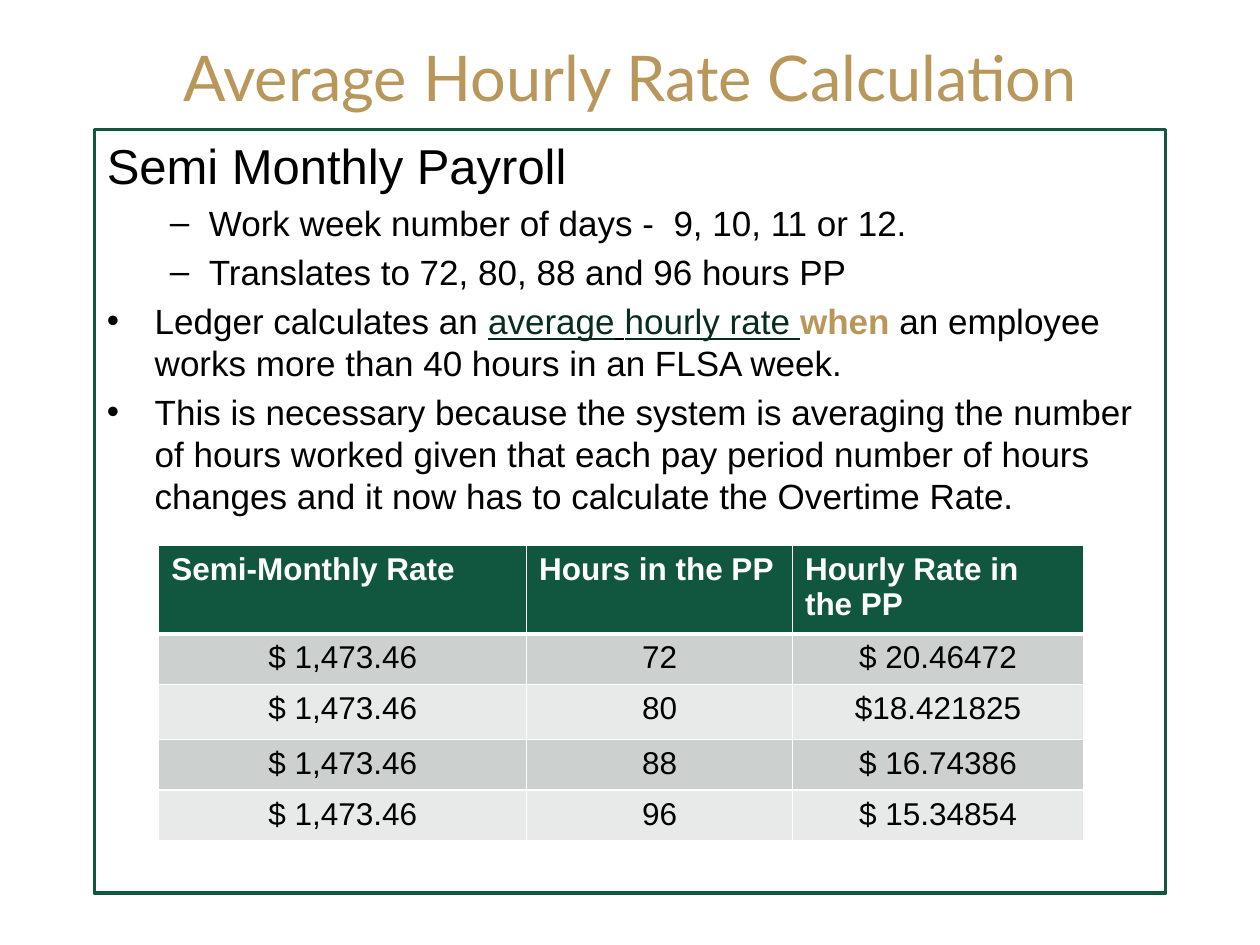
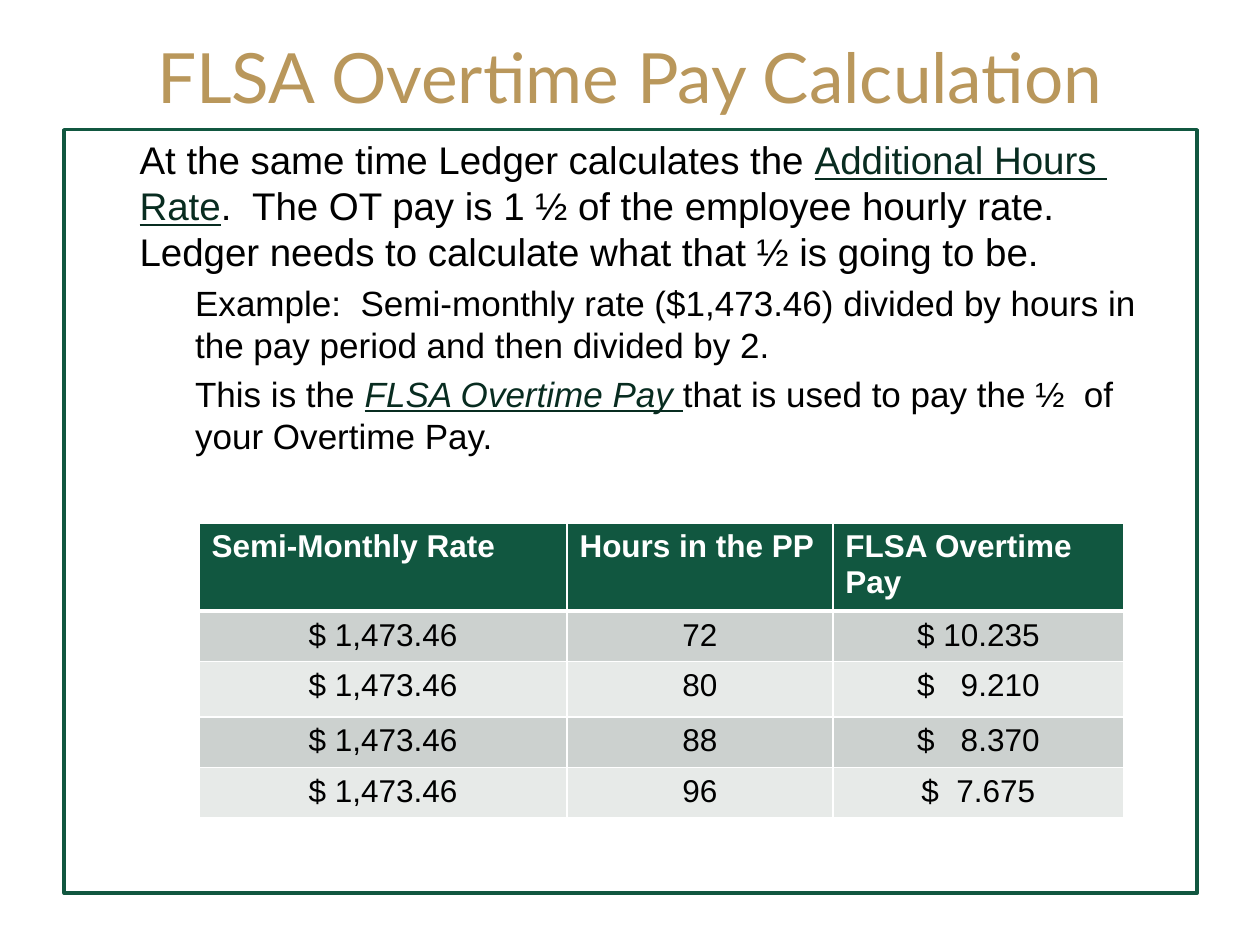
from lxml import etree
from pptx import Presentation
from pptx.dml.color import RGBColor
from pptx.enum.shapes import MSO_SHAPE
from pptx.enum.text import MSO_ANCHOR, PP_ALIGN
from pptx.oxml.ns import qn
from pptx.util import Pt

LEFT, CENTER = PP_ALIGN.LEFT, PP_ALIGN.CENTER
TOP, MIDDLE = MSO_ANCHOR.TOP, MSO_ANCHOR.MIDDLE
RECT = MSO_SHAPE.RECTANGLE

PX = 9144  # EMU in one px, 100 px to the inch
GREEN, GOLD, DARK = "115740", "B9975B", "082C20"
BLACK, WHITE = "000000", "FFFFFF"
BANDS = ["CCD1CF", "E7EAE8"]

TITLE_BOX = (75, 18, 850, 85)
BODY_TOP, BODY_H = 103, 606
COLS = [292, 211, 231]
ROWS = [37, 44, 37, 37]
RATE = "$ 1,473.46"
HOURS = [72, 80, 88, 96]

TERM = {"color": DARK, "line": True}
# Paragraph kinds: size, left margin, indent, bullet
KINDS = {
    "head": (28, 0, 0, None),
    "dash": (20, 81, -31, "–"),
    "dot": (20, 38, -38, "•"),
    "lead": (22, 50, 0, None),
    "sub": (20, 94, 0, None),
}

SLIDES = [
    {
        "title": ("Average Hourly Rate Calculation", 36),
        "body": (75, 850),
        "text": [
            ("head", [("Semi Monthly Payroll", {})]),
            ("dash", [("Work week number of days -  9, 10, 11 or 12.", {})]),
            ("dash", [("Translates to 72, 80, 88 and 96 hours PP", {})]),
            ("dot", [
                ("Ledger calculates an ", {}),
                ("average", TERM),
                (" ", {"line": True}),
                ("hourly rate ", TERM),
                ("when", {"color": GOLD, "bold": True}),
                (" an employee works more than 40 hours in an FLSA week.", {}),
            ]),
            ("dot", [("This is necessary because the system is averaging the "
                      "number of hours worked given that each pay period "
                      "number of hours changes and it now has to calculate "
                      "the Overtime Rate.", {})]),
        ],
        "table": (126, 433, 65),
        "head": "Hourly Rate in the PP",
        "pay": ["$ 20.46472", "$18.421825", "$ 16.74386", "$ 15.34854"],
    },
    {
        "title": ("FLSA Overtime Pay Calculation", 39.6),
        "body": (51, 899),
        "text": [
            ("lead", [
                ("At the same time Ledger calculates the ", {}),
                ("Additional Hours  Rate", TERM),
                (".  The OT pay is 1 ½ of the employee hourly rate. Ledger "
                 "needs to calculate what that ½ is going to be.", {}),
            ]),
            ("sub", [("Example:  Semi-monthly rate ($1,473.46) divided by "
                      "hours in the pay period and then divided by 2.", {})]),
            ("sub", [
                ("This is the ", {}),
                ("FLSA Overtime Pay ", {**TERM, "slant": True}),
                ("that is used to pay the ½  of your Overtime Pay.", {}),
            ]),
        ],
        "table": (158, 415, 69),
        "head": "FLSA Overtime Pay",
        "pay": ["$ 10.235", "$   9.210", "$   8.370", "$  7.675"],
    },
]


def rgb(code):
    return RGBColor.from_string(code)


def px(*nums):
    return [n * PX for n in nums]


def paint(fill, color):
    fill.solid()
    fill.fore_color.rgb = rgb(color)


def add_run(para, text, size, color=BLACK, face="Arial", bold=False,
            slant=False, line=False):
    run = para.add_run()
    run.text = text
    font = run.font
    font.name, font.size, font.bold = face, Pt(size), bold
    font.italic, font.underline = slant, line
    font.color.rgb = rgb(color)


def add_title(slide, text, size):
    frame = slide.shapes.add_textbox(*px(*TITLE_BOX)).text_frame
    frame.word_wrap = True
    frame.vertical_anchor = MIDDLE
    para = frame.paragraphs[0]
    para.alignment = CENTER
    add_run(para, text, size, GOLD, "Lato")


def set_indent(para, margin, indent, mark):
    props = para._p.get_or_add_pPr()
    props.set("marL", str(margin * PX))
    props.set("indent", str(indent * PX))
    if mark:
        font = etree.SubElement(props, qn("a:buFont"))
        font.set("typeface", "Arial")
        etree.SubElement(props, qn("a:buChar")).set("char", mark)


def add_body(slide, left, width, text):
    box = slide.shapes.add_shape(RECT, *px(left, BODY_TOP, width, BODY_H))
    box.shadow.inherit = False
    paint(box.fill, WHITE)
    box.line.color.rgb = rgb(GREEN)
    box.line.width = Pt(2)
    frame = box.text_frame
    frame.word_wrap = True
    frame.vertical_anchor = TOP
    for i, (kind, runs) in enumerate(text):
        size, margin, indent, mark = KINDS[kind]
        para = frame.add_paragraph() if i else frame.paragraphs[0]
        set_indent(para, margin, indent, mark)
        para.alignment = LEFT
        if i:
            para.space_before = Pt(size * 0.2)
        for words, style in runs:
            add_run(para, words, size, **style)


def add_edges(cell, row):
    """Draw white cell borders, thick between header and first row."""
    props = cell._tc.get_or_add_tcPr()
    for side in "LRTB":
        thick = (side, row) in [("B", 0), ("T", 1)]
        edge = etree.SubElement(props, qn("a:ln" + side))
        edge.set("w", str(Pt(3 if thick else 1)))
        fill = etree.SubElement(edge, qn("a:solidFill"))
        etree.SubElement(fill, qn("a:srgbClr")).set("val", WHITE)


def add_grid(slide, left, top, first, head, pay):
    data = [("Semi-Monthly Rate", "Hours in the PP", head)]
    data += [(RATE, str(h), p) for h, p in zip(HOURS, pay)]
    highs = [first] + ROWS
    spot = px(left, top, sum(COLS), sum(highs))
    grid = slide.shapes.add_table(len(data), len(COLS), *spot).table
    for col, wide in zip(grid.columns, COLS):
        col.width = wide * PX
    for r, (line, high) in enumerate(zip(data, highs)):
        grid.rows[r].height = high * PX
        for c, text in enumerate(line):
            cell = grid.cell(r, c)
            add_edges(cell, r)
            paint(cell.fill, BANDS[(r - 1) % 2] if r else GREEN)
            para = cell.text_frame.paragraphs[0]
            para.alignment = CENTER if r else LEFT
            add_run(para, text, 18, BLACK if r else WHITE, bold=r == 0)


def main():
    deck = Presentation()
    deck.slide_width, deck.slide_height = px(1000, 750)
    for page in SLIDES:
        slide = deck.slides.add_slide(deck.slide_layouts[6])
        paint(slide.background.fill, WHITE)
        add_title(slide, *page["title"])
        add_body(slide, *page["body"], page["text"])
        add_grid(slide, *page["table"], page["head"], page["pay"])
    deck.save("out.pptx")


if __name__ == "__main__":
    main()
